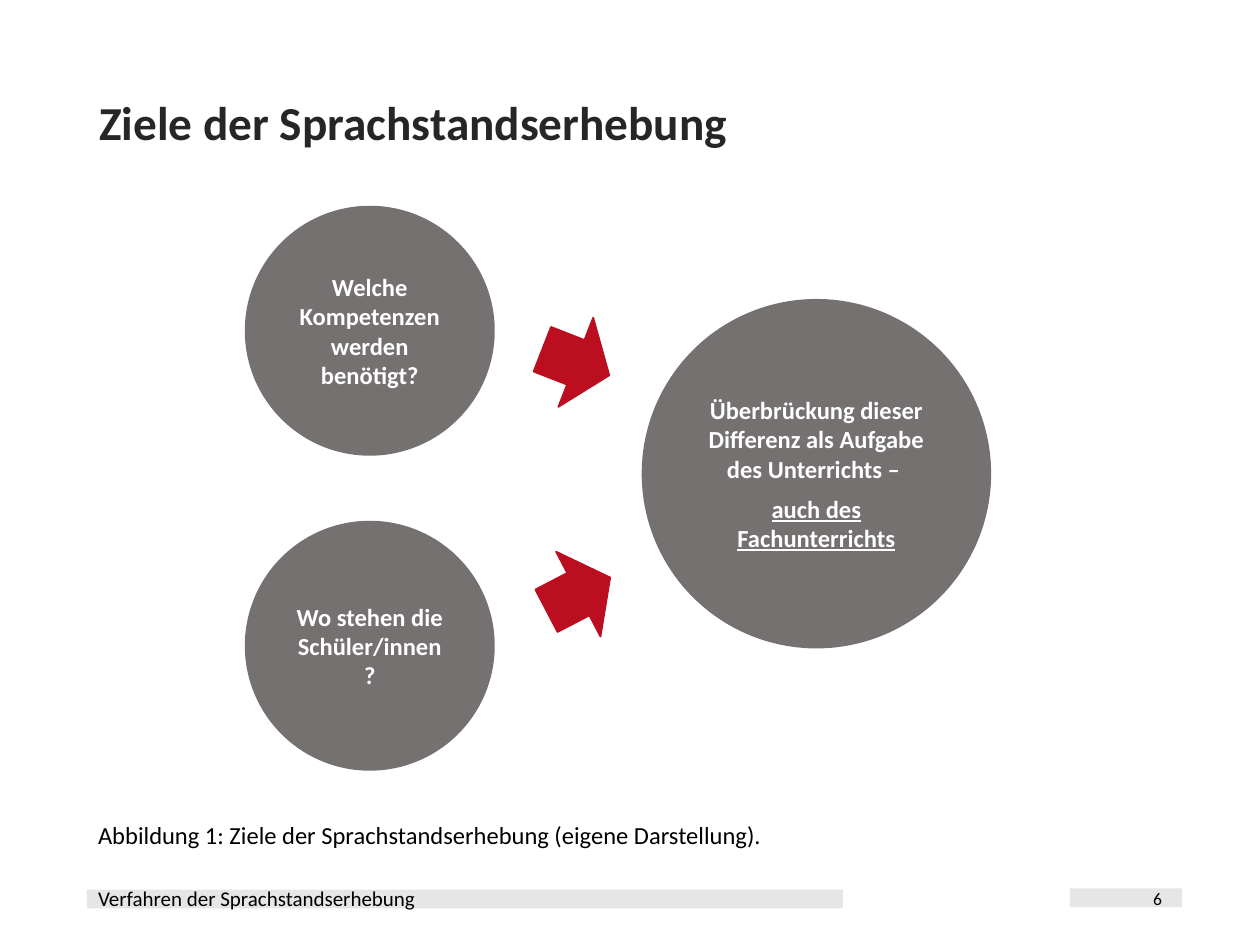
from dataclasses import dataclass

from pptx import Presentation
from pptx import util as u
from pptx.dml.color import RGBColor
from pptx.enum import shapes, text


@dataclass(frozen=True)
class Theme:
    """Colours, font and type sizes of the slide."""
    font: str = "Calibri"
    heading: str = "262626"
    ink: str = "000000"
    light: str = "FFFFFF"
    bar: str = "E7E6E6"
    circle: str = "767171"
    arrow: str = "BB0F21"
    title_size: int = 27
    body_size: int = 14
    footer_size: int = 12
    number_size: int = 10


THEME = Theme()


def style(paragraph, size, color, bold=False, align=text.PP_ALIGN.LEFT):
    """Set the font and alignment of one paragraph."""
    paragraph.alignment = align
    font = paragraph.font
    font.name, font.size, font.bold = THEME.font, u.Pt(size), bold
    font.color.rgb = RGBColor.from_string(color)


def add_label(slide, box, wording, size, color=THEME.ink, bold=False,
              align=text.PP_ALIGN.LEFT, anchor=text.MSO_ANCHOR.MIDDLE):
    """Add a wrapped one-paragraph text box and return its paragraph."""
    frame = slide.shapes.add_textbox(*map(u.Inches, box)).text_frame
    frame.word_wrap = True
    frame.vertical_anchor = anchor
    paragraph = frame.paragraphs[0]
    paragraph.text = wording
    style(paragraph, size, color, bold, align)
    return paragraph


def add_filled(slide, kind, box, color, outlined=True):
    """Add a preset shape in one flat colour."""
    shape = slide.shapes.add_shape(kind, *map(u.Inches, box))
    shape.shadow.inherit = False
    shape.fill.solid()
    shape.fill.fore_color.rgb = RGBColor.from_string(color)
    if outlined:
        shape.line.color.rgb = RGBColor.from_string(color)
        shape.line.width = u.Pt(1)
    else:
        shape.line.fill.background()
    return shape


def add_circle(slide, left, top, diameter, *wordings):
    """Add a grey circle with centred bold paragraphs."""
    circle = add_filled(slide, shapes.MSO_SHAPE.OVAL,
                        (left, top, diameter, diameter), THEME.circle)
    frame = circle.text_frame
    frame.word_wrap = True
    frame.vertical_anchor = text.MSO_ANCHOR.MIDDLE
    for index, wording in enumerate(wordings):
        paragraph = frame.add_paragraph() if index else frame.paragraphs[0]
        paragraph.text = wording
        style(paragraph, THEME.body_size, THEME.light, True, text.PP_ALIGN.CENTER)
    return frame.paragraphs


def add_diagram(slide, left, top):
    """Draw two questions whose arrows lead to the shared goal."""
    goal = add_circle(slide, left + 3.15, top + 0.74, 2.76,
                      "Überbrückung dieser\vDifferenz als Aufgabe\vdes Unterrichts – ",
                      "auch des Fachunterrichts")
    goal[1].space_before = u.Pt(6)
    goal[1].font.underline = True

    questions = ("Welche Kompetenzen werden benötigt?", "Wo stehen die Schüler/innen?")
    for row, question in enumerate(questions):
        add_circle(slide, left, top + row * 2.5, 1.97, question)

    for dx, dy, rotation in ((2.24, 0.95, 291.3), (2.26, 2.79, 242.4)):
        arrow = add_filled(slide, shapes.MSO_SHAPE.DOWN_ARROW,
                           (left + dx, top + dy, 0.76, 0.57), THEME.arrow)
        arrow.rotation = rotation


def add_footer(slide, left, top):
    """Place the footer bars, the running title and the page number."""
    for dx, dy, width in ((0, 0.01, 6), (7.8, 0, 0.89)):
        add_filled(slide, shapes.MSO_SHAPE.RECTANGLE,
                   (left + dx, top + dy, width, 0.15), THEME.bar, outlined=False)
    add_label(slide, (left - 0.01, top, 6.01, 0.16),
              "Verfahren der Sprachstandserhebung", THEME.footer_size)
    add_label(slide, (left + 7.84, top - 0.12, 0.79, 0.4), "6",
              THEME.number_size, align=text.PP_ALIGN.RIGHT)


def main():
    """Build and save the slide."""
    deck = Presentation()
    deck.slide_width, deck.slide_height = u.Inches(10), u.Inches(7.5)
    slide = deck.slides.add_slide(deck.slide_layouts[6])
    add_footer(slide, 0.69, 7.05)
    title = add_label(slide, (0.69, 0.58, 8.62, 0.82), "Ziele der Sprachstandserhebung",
                      THEME.title_size, THEME.heading, bold=True)
    title.line_spacing = 0.9
    add_label(slide, (0.68, 6.46, 8.78, 0.34),
              "Abbildung 1: Ziele der Sprachstandserhebung (eigene Darstellung).",
              THEME.body_size, anchor=text.MSO_ANCHOR.TOP)
    add_diagram(slide, 1.95, 1.64)
    deck.save("out.pptx")


if __name__ == "__main__":
    main()
